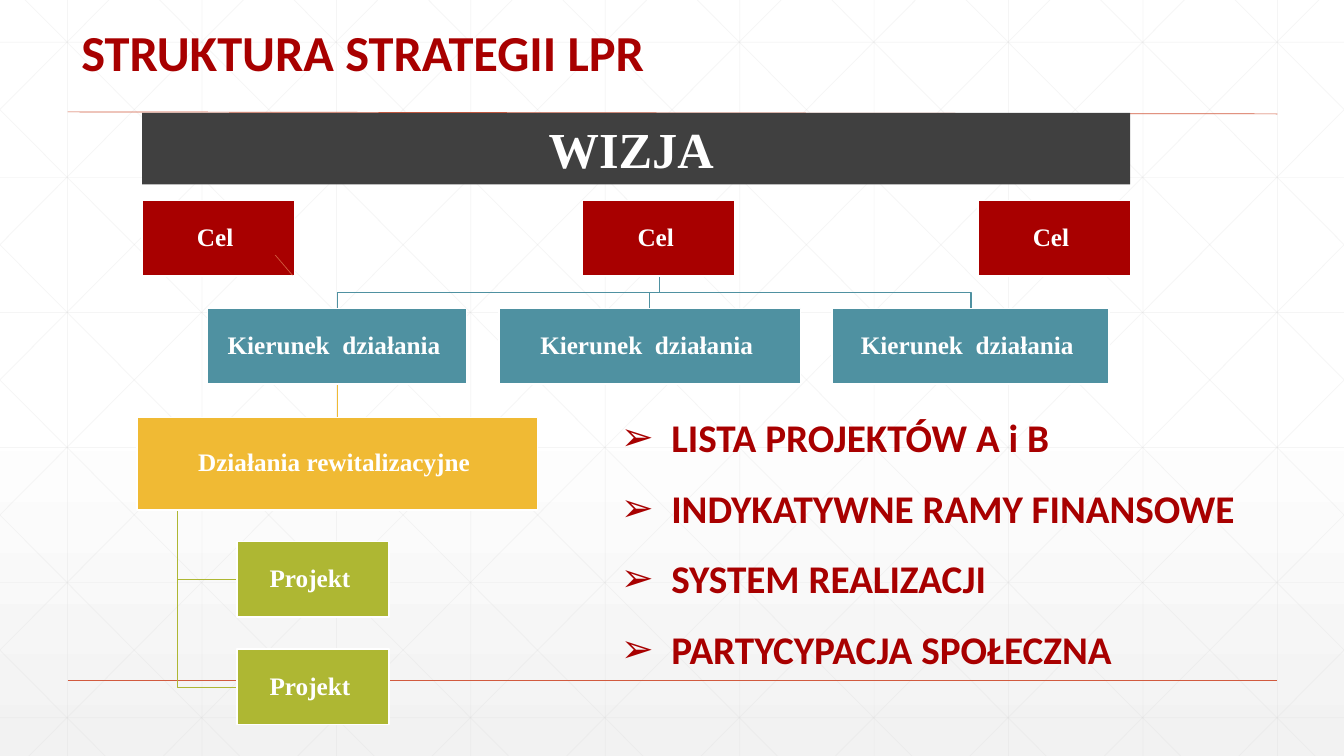
from lxml import etree
from pptx import Presentation
from pptx.dml.color import RGBColor
from pptx.enum.shapes import MSO_CONNECTOR, MSO_SHAPE
from pptx.enum.text import MSO_ANCHOR, PP_ALIGN
from pptx.oxml.ns import qn
from pptx.util import Inches, Pt

# Content
WIDTH, HEIGHT = 13.33, 7.5
COLORS = {
    "white": "FFFFFF", "haze": "F2F2F2", "grid": "D9D9D9", "rule": "D15A3E",
    "vision": "404040", "goal": "A80000", "direction": "4F91A1",
    "action": "F0BA34", "project": "AEB733",
}
TITLE = "STRUKTURA STRATEGII LPR"
VISION = "WIZJA "
# (text, colour, top, height, [(left, width), ...])
LEVELS = [
    ("Cel ", "goal", 1.99, 0.75, [(1.41, 1.51), (5.78, 1.51), (9.7, 1.51)]),
    ("Kierunek  działania ", "direction", 3.06, 0.75,
     [(2.06, 2.57), (4.95, 2.99), (8.25, 2.75)]),
    ("Działania rewitalizacyjne ", "action", 4.14, 0.92, [(1.36, 3.97)]),
    ("Projekt ", "project", 5.37, 0.75, [(2.35, 1.51)]),
    ("Projekt ", "project", 6.44, 0.75, [(2.35, 1.51)]),
]
TOPICS = ["LISTA PROJEKTÓW A i B", "INDYKATYWNE RAMY FINANSOWE",
          "SYSTEM REALIZACJI", "PARTYCYPACJA SPOŁECZNA"]
RULES = [((0.67, 6.75), (12.67, 6.75), 1), ((0.67, 1.11), (12.67, 1.13), 0.5)]
TICK = ((2.9, 2.73), (2.73, 2.53), 0.5)

# Text formats
HEADING = {"name": "Calibri", "size": Pt(36), "bold": True}
LISTING = {"name": "Calibri", "size": Pt(28), "bold": True}
BANNER = {"name": "Times New Roman", "size": Pt(36), "bold": True}
LABEL = {"name": "Times New Roman", "size": Pt(18), "bold": True}
TIGHT = {f"margin_{side}": Inches(0.01) for side in ("left", "top", "right", "bottom")}
CENTRED = {"alignment": PP_ALIGN.CENTER}

deck = Presentation()
deck.slide_width, deck.slide_height = Inches(WIDTH), Inches(HEIGHT)
slide = deck.slides.add_slide(deck.slide_layouts[6])
shapes = slide.shapes


def rgb(color):
    return RGBColor.from_string(COLORS[color])


def apply(target, values):
    for name, value in values.items():
        setattr(target, name, value)


def draw_line(start, end, color, weight, opacity=None):
    line = shapes.add_connector(MSO_CONNECTOR.STRAIGHT,
                                *(Inches(v) for v in (*start, *end)))
    line.line.width = Pt(weight)
    line.line.color.rgb = rgb(color)
    properties = line.element.spPr
    if opacity:
        tone = next(properties.iter(qn("a:srgbClr")))
        etree.SubElement(tone, qn("a:alpha")).set("val", str(opacity * 1000))
    etree.SubElement(properties, qn("a:effectLst"))


def draw_elbow(points, color):
    corners = [(Inches(x), Inches(y)) for x, y in points]
    builder = shapes.build_freeform(*corners[0])
    builder.add_line_segments(corners[1:], close=False)
    elbow = builder.convert_to_shape()
    elbow.shadow.inherit = False
    elbow.fill.background()
    elbow.line.width = Pt(1)
    elbow.line.color.rgb = rgb(color)


def write(paragraph, text, font, color, layout):
    run = paragraph.add_run()
    run.text = text
    apply(run.font, font)
    run.font.color.rgb = rgb(color)
    apply(paragraph, layout)


def draw_box(text, place, color, font, frame, layout, edge=None):
    box = shapes.add_shape(MSO_SHAPE.RECTANGLE, *(Inches(v) for v in place))
    box.shadow.inherit = False
    box.fill.solid()
    box.fill.fore_color.rgb = rgb(color)
    if edge:
        box.line.color.rgb = rgb(edge)
        box.line.width = Pt(1)
    else:
        box.line.fill.background()
    apply(box.text_frame, {"word_wrap": True, "vertical_anchor": MSO_ANCHOR.MIDDLE, **frame})
    write(box.text_frame.paragraphs[0], text, font, "white", layout)


def add_frame(place, anchor):
    frame = shapes.add_textbox(*(Inches(v) for v in place)).text_frame
    apply(frame, {"word_wrap": True, "vertical_anchor": anchor})
    return frame


# Background gradient
backdrop = slide.background.fill
backdrop.gradient()
backdrop.gradient_angle = 270
for stop, (position, color) in zip(backdrop.gradient_stops, [(0.53, "white"), (1, "haze")]):
    stop.position = position
    stop.color.rgb = rgb(color)

# Background grid: uprights, levels, then mirrored diagonals clipped to the slide
STEP = 4 / 3
SLOPE = HEIGHT / 7.46
grid = [((0.67 + STEP * i, 0), (0.67 + STEP * i, HEIGHT)) for i in range(10)]
grid += [((0, 0.42 + 1.34 * i), (WIDTH, 0.42 + 1.34 * i)) for i in range(6)]
for i in range(-5, 10):
    top_x = 0.25 + STEP * i
    first, last = max(top_x, 0), min(top_x + 7.46, WIDTH)
    y1, y2 = (first - top_x) * SLOPE, (last - top_x) * SLOPE
    grid += [((first, y1), (last, y2)), ((WIDTH - first, y1), (WIDTH - last, y2))]
for start, end in grid:
    draw_line(start, end, "grid", 0.5, opacity=25)

# Rules and title
for start, end, weight in RULES:
    draw_line(start, end, "rule", weight)
heading = add_frame((0.71, 0.14, 10.5, 0.73), MSO_ANCHOR.BOTTOM)
write(heading.paragraphs[0], TITLE, HEADING, "goal", {"line_spacing": 0.9})

# Links from the middle goal to the directions
GOAL_X, GOAL_BOTTOM, BUS_Y, DIRECTION_TOP = 6.54, 2.75, 2.9, 3.06
for x in (9.63, 6.44, 3.35):
    draw_elbow([(GOAL_X, GOAL_BOTTOM), (GOAL_X, BUS_Y), (x, BUS_Y), (x, DIRECTION_TOP)],
               "direction")

# Links from the direction to the actions and on to the projects
draw_line((3.35, 3.82), (3.35, 4.14), "action", 1)
for y in (6.82, 5.75):
    draw_elbow([(1.76, 5.05), (1.76, y), (2.35, y)], "project")

# Boxes of the structure
for text, color, top, height, spans in LEVELS:
    for left, width in spans:
        draw_box(text, (left, top, width, height), color, LABEL, TIGHT,
                 {**CENTRED, "line_spacing": 0.9}, edge="white")
draw_box(VISION, (1.41, 1.12, 9.8, 0.71), "vision", BANNER, {}, CENTRED)

# Bulleted topics
topics = add_frame((6.06, 3.82, 7.28, 2.93), MSO_ANCHOR.TOP)
for i, topic in enumerate(TOPICS):
    paragraph = topics.add_paragraph() if i else topics.paragraphs[0]
    write(paragraph, topic, LISTING, "goal", {"line_spacing": 1.5})
    indent = paragraph._p.get_or_add_pPr()
    indent.set("marL", str(Inches(0.5)))
    indent.set("indent", str(-Inches(0.5)))
    etree.SubElement(indent, qn("a:buFont")).set("typeface", "Arial")
    etree.SubElement(indent, qn("a:buChar")).set("char", "➢")

# Short tick on the first goal
draw_line(*TICK[:2], "rule", TICK[2])

deck.save("out.pptx")
